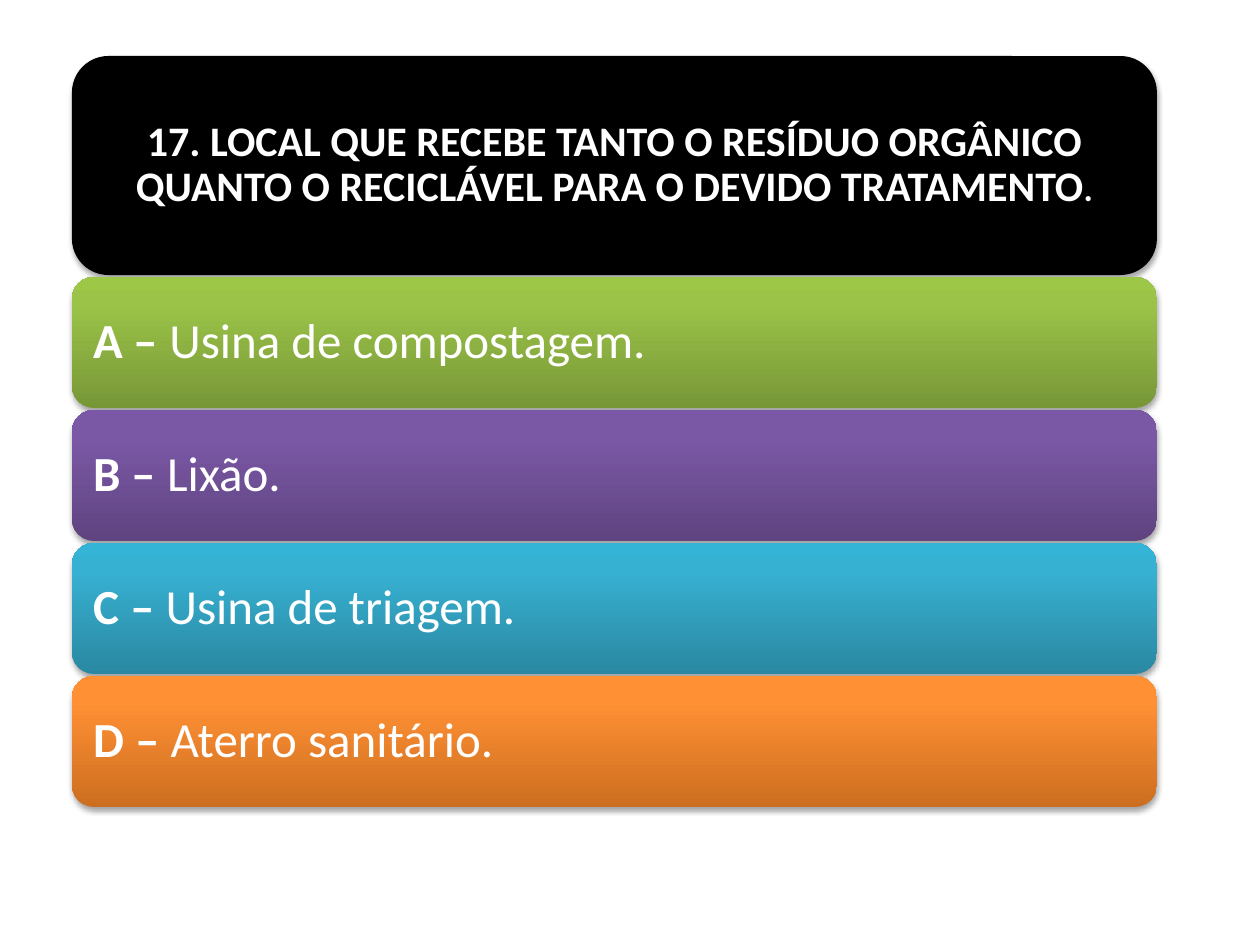
import copy

import pptx
import pptx.dml.color
import pptx.enum.shapes
import pptx.enum.text
import pptx.oxml
import pptx.oxml.ns
import pptx.util

PX_PER_INCH = 126
FONT = "Calibri"
COLORS = {
    "text": "FFFFFF",
    "question": "000000",
    "shadow": "000000",
    "green": ("779737", "9BC348", "9DC746"),
    "purple": ("5F4480", "7B58A6", "7C57A8"),
    "blue": ("2A88A2", "37B1D2", "34B4D6"),
    "orange": ("CC6E20", "FF9034", "FF9136"),
}
GRADIENT_POSITIONS = (0, 0.8, 1)
CARD_LEFT, CARD_WIDTH = 72, 1085
QUESTION_TOP, QUESTION_HEIGHT = 56, 219
ANSWER_TOP, ANSWER_HEIGHT, ANSWER_GAP = 277, 131, 2
QUESTION = (
    "17. LOCAL QUE RECEBE TANTO O RESÍDUO ORGÂNICO "
    "QUANTO O RECICLÁVEL PARA O DEVIDO TRATAMENTO"
)
ANSWERS = [
    ("A – ", "Usina de compostagem.", "green"),
    ("B – ", "Lixão.", "purple"),
    ("C – ", "Usina de triagem.", "blue"),
    ("D – ", "Aterro sanitário.", "orange"),
]


def px(length):
    return pptx.util.Emu(round(length * 914400 / PX_PER_INCH))


def rgb(color):
    return pptx.dml.color.RGBColor.from_string(color)


def add_shadow(card):
    card.shadow.inherit = False
    effects = card._element.spPr.find(pptx.oxml.ns.qn("a:effectLst"))
    effects.append(pptx.oxml.parse_xml(
        f'<a:outerShdw {pptx.oxml.ns.nsdecls("a")} blurRad="40000" '
        'dist="23000" dir="5400000" rotWithShape="0">'
        f'<a:srgbClr val="{COLORS["shadow"]}"><a:alpha val="35000"/></a:srgbClr>'
        '</a:outerShdw>'
    ))


def add_card(slide, top, height):
    card = slide.shapes.add_shape(
        pptx.enum.shapes.MSO_SHAPE.ROUNDED_RECTANGLE,
        px(CARD_LEFT), px(top), px(CARD_WIDTH), px(height),
    )
    card.line.fill.background()
    add_shadow(card)
    return card


def fill_gradient(card, stop_colors):
    card.fill.gradient()
    card.fill.gradient_angle = 90
    stop_list = card._element.spPr.find(".//" + pptx.oxml.ns.qn("a:gsLst"))
    stop_list.append(copy.deepcopy(stop_list[-1]))
    for stop, position, color in zip(
        card.fill.gradient_stops, GRADIENT_POSITIONS, stop_colors
    ):
        stop.position = position
        stop.color.rgb = rgb(color)


def write_text(shape, alignment, inset, runs):
    frame = shape.text_frame
    frame.word_wrap = True
    frame.auto_size = pptx.enum.text.MSO_AUTO_SIZE.NONE
    frame.vertical_anchor = pptx.enum.text.MSO_ANCHOR.MIDDLE
    frame.margin_left = frame.margin_right = px(inset)
    frame.margin_top = frame.margin_bottom = px(inset)
    paragraph = frame.paragraphs[0]
    paragraph.alignment = alignment
    paragraph.line_spacing = 0.9
    for text, size, bold in runs:
        run = paragraph.add_run()
        run.text = text
        run.font.name = FONT
        run.font.size = pptx.util.Pt(size)
        run.font.bold = bold
        run.font.color.rgb = rgb(COLORS["text"])


def add_question(slide):
    card = add_card(slide, QUESTION_TOP, QUESTION_HEIGHT)
    card.fill.solid()
    card.fill.fore_color.rgb = rgb(COLORS["question"])
    question = slide.shapes.title
    margin = 11
    question.left, question.top = px(CARD_LEFT + margin), px(QUESTION_TOP + margin)
    question.width = px(CARD_WIDTH - 2 * margin)
    question.height = px(QUESTION_HEIGHT - 2 * margin)
    write_text(question, pptx.enum.text.PP_ALIGN.CENTER, 12,
               [(QUESTION, 24, True), (".", 20, True)])
    card._element.addnext(question._element)


def add_answer(slide, index, letter, answer, color):
    top = ANSWER_TOP + index * (ANSWER_HEIGHT + ANSWER_GAP)
    card = add_card(slide, top, ANSWER_HEIGHT)
    fill_gradient(card, COLORS[color])
    write_text(card, pptx.enum.text.PP_ALIGN.LEFT, 15,
               [(letter, 28, True), (answer, 28, False)])


def main():
    deck = pptx.Presentation()
    deck.slide_width, deck.slide_height = px(1260), px(945)
    slide = deck.slides.add_slide(deck.slide_layouts[5])
    add_question(slide)
    for index, (letter, answer, color) in enumerate(ANSWERS):
        add_answer(slide, index, letter, answer, color)
    deck.save("out.pptx")


if __name__ == "__main__":
    main()
